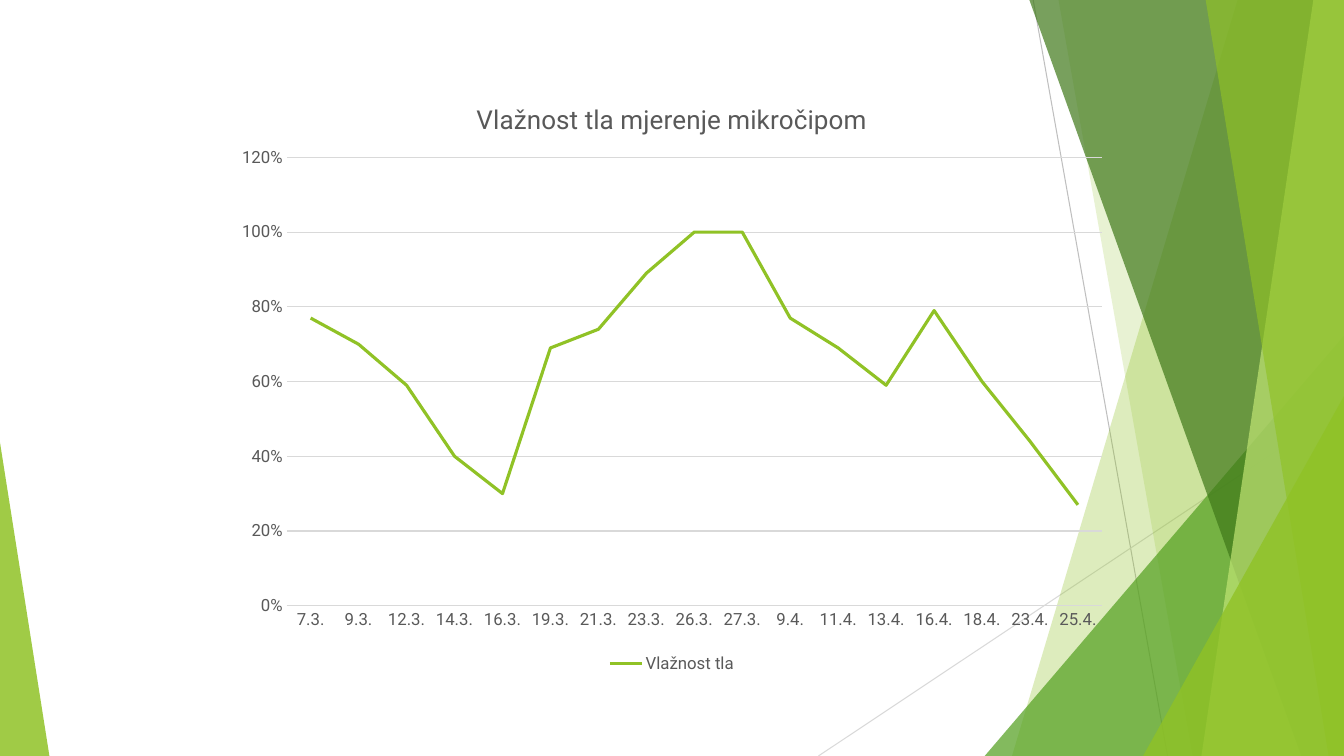
from lxml import etree
from pptx import Presentation
from pptx import util as u
from pptx.chart.data import CategoryChartData
from pptx.dml.color import RGBColor
from pptx.enum import chart as charts, shapes
from pptx.oxml import ns

WIDTH, HEIGHT = 960, 540
LIME, GREY, TEXT = "90C226", "D9D9D9", "595959"


def paint(target, color, opacity=100):
    """Give a fill or line format a solid colour with an opacity in percent."""
    fill = getattr(target, "fill", target)
    fill.solid()
    fill.fore_color.rgb = RGBColor.from_string(color)
    if opacity < 100:
        srgb = next(fill._xPr.iter(ns.qn("a:srgbClr")))
        etree.SubElement(srgb, ns.qn("a:alpha"), val=str(opacity * 1000))


def style_font(font, size):
    font.name = "Roboto"
    font.size = u.Pt(size)
    font.bold = False
    paint(font, TEXT)


prs = Presentation()
prs.slide_width, prs.slide_height = u.Pt(WIDTH), u.Pt(HEIGHT)
slide = prs.slides.add_slide(prs.slide_layouts[6])

# Thin rays behind the facets
for x1, y1, x2, y2, color in [
    (738, 0, 834, HEIGHT, "BFBFBF"),
    (WIDTH, 290, 584.6, HEIGHT, GREY),
]:
    ray = slide.shapes.add_connector(
        shapes.MSO_CONNECTOR.STRAIGHT, u.Pt(x1), u.Pt(y1), u.Pt(x2), u.Pt(y2))
    paint(ray.line, color)
    ray.line.width = u.Pt(0.75)
    etree.SubElement(ray._element.spPr, ns.qn("a:effectLst"))

# Facets, back to front. A band runs from its top-left and bottom-left x to the
# right edge; a corner has left, top, width and the position of its tip.
facets = [
    ("band", (884.2, 722.9), LIME, 30),
    ("band", (756, 851.8), LIME, 20),
    ("corner", (703.4, 239.8, 256.6, 1), "54A021", 72),
    ("band", (735.1, 929.5), "3F7819", 70),
    ("band", (938.2, 858.2), "C0E474", 70),
    ("band", (861.1, 949), LIME, 65),
    ("corner", (816.5, 283, 143.5, 1), LIME, 80),
    ("corner", (0, 316.1, 35.3, 0), LIME, 85),
]
for kind, place, color, opacity in facets:
    if kind == "band":
        top_x, bottom_x = place
        outline = slide.shapes.build_freeform(u.Pt(top_x), u.Pt(-0.6))
        outline.add_line_segments([
            (u.Pt(WIDTH), u.Pt(-0.6)),
            (u.Pt(WIDTH), u.Pt(HEIGHT)),
            (u.Pt(bottom_x), u.Pt(HEIGHT)),
        ])
        facet = outline.convert_to_shape()
    else:
        left, top, width, tip = place
        facet = slide.shapes.add_shape(
            shapes.MSO_SHAPE.ISOSCELES_TRIANGLE,
            u.Pt(left), u.Pt(top), u.Pt(width), u.Pt(HEIGHT - top))
        facet.adjustments[0] = tip
    paint(facet, color, opacity)
    facet.line.fill.background()
    facet.shadow.inherit = False

# Soil moisture chart
moisture = {
    "7.3.": 0.77, "9.3.": 0.7, "12.3.": 0.59, "14.3.": 0.4, "16.3.": 0.3,
    "19.3.": 0.69, "21.3.": 0.74, "23.3.": 0.89, "26.3.": 1, "27.3.": 1,
    "9.4.": 0.77, "11.4.": 0.69, "13.4.": 0.59, "16.4.": 0.79, "18.4.": 0.6,
    "23.4.": 0.44, "25.4.": 0.27,
}
data = CategoryChartData(number_format="0%")
data.categories = list(moisture)
data.add_series("Vlažnost tla", list(moisture.values()))
chart = slide.shapes.add_chart(
    charts.XL_CHART_TYPE.LINE,
    u.Pt(160), u.Pt(57), u.Pt(640), u.Pt(427), data).chart
style_font(chart.font, 12)

chart.has_title = True
title = chart.chart_title.text_frame
title.text = "Vlažnost tla mjerenje mikročipom"
style_font(title.paragraphs[0].runs[0].font, 18.6)
chart.chart_title.include_in_layout = False

chart.has_legend = True
chart.legend.position = charts.XL_LEGEND_POSITION.BOTTOM
chart.legend.include_in_layout = False
style_font(chart.legend.font, 12)

dates, percents = chart.category_axis, chart.value_axis
for axis in (dates, percents):
    axis.major_tick_mark = axis.minor_tick_mark = charts.XL_TICK_MARK.NONE
    style_font(axis.tick_labels.font, 12)
percents.minimum_scale, percents.maximum_scale, percents.major_unit = 0, 1.2, 0.2
percents.tick_labels.number_format = "0%"
percents.tick_labels.number_format_is_linked = False
percents.format.line.fill.background()
for rule in (dates.format.line, percents.major_gridlines.format.line):
    paint(rule, GREY)
    rule.width = u.Pt(0.75)

# Place the plot inside the chart, as fractions of its size
plot_area = chart._chartSpace.chart.plotArea
for unplaced in plot_area.findall(ns.qn("c:layout")):
    plot_area.remove(unplaced)
layout = etree.Element(ns.qn("c:layout"))
plot_area.insert(0, layout)
manual = etree.SubElement(layout, ns.qn("c:manualLayout"))
for tag, value in [
    ("layoutTarget", "inner"), ("xMode", "edge"), ("yMode", "edge"),
    ("x", "0.07"), ("y", "0.13"), ("w", "0.91"), ("h", "0.75"),
]:
    etree.SubElement(manual, ns.qn("c:" + tag), val=value)

chart.plots[0].vary_by_categories = False
curve = chart.plots[0].series[0]
curve.smooth = False
curve.marker.style = charts.XL_MARKER_STYLE.NONE
paint(curve.format.line, LIME)
curve.format.line.width = u.Pt(2.25)

prs.save("out.pptx")
